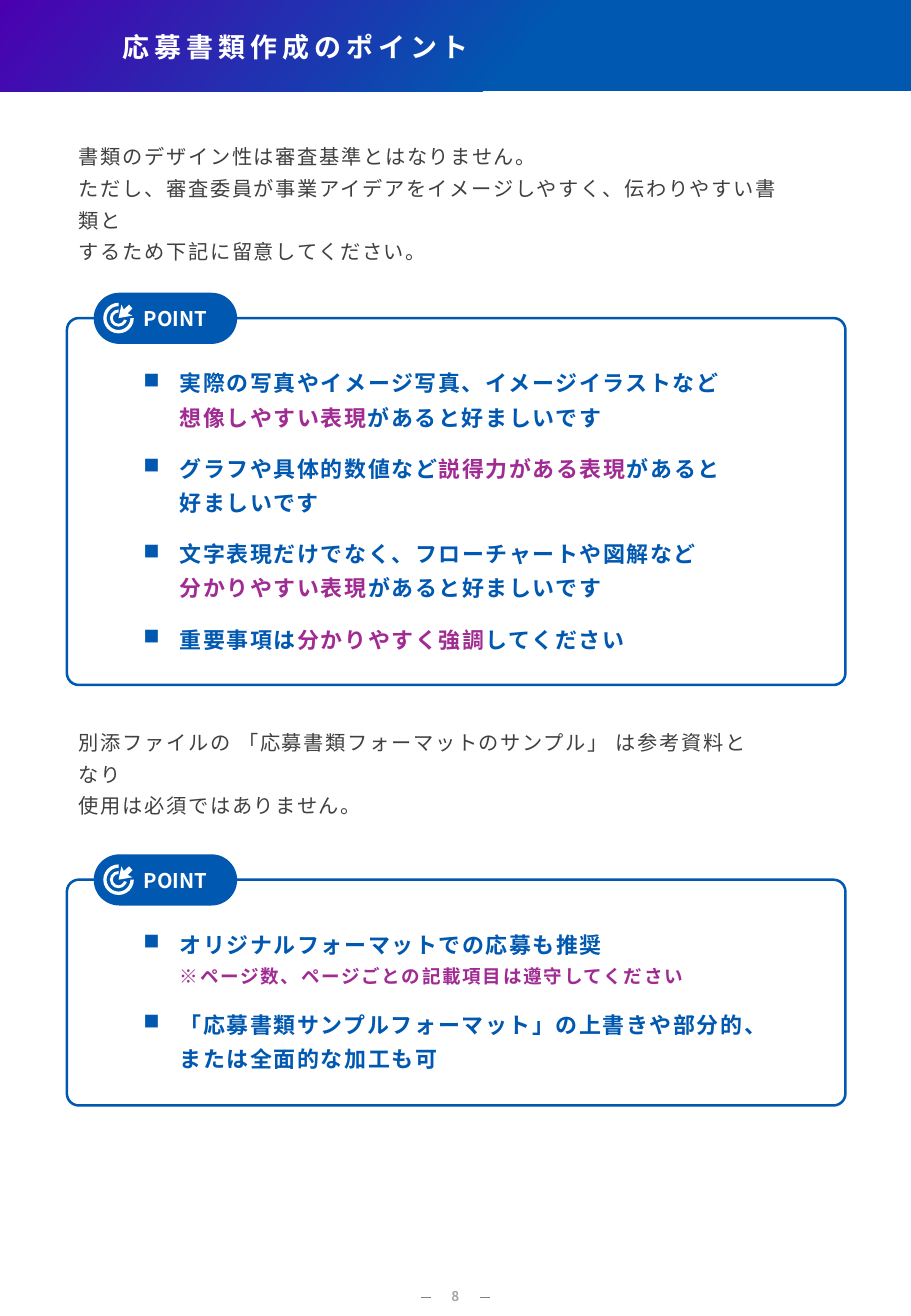
import pptx
import pptx.util
import pptx.dml.color
import pptx.enum.shapes
import pptx.enum.text
import pptx.oxml
import pptx.oxml.ns
from lxml import etree

Cm, Pt = pptx.util.Cm, pptx.util.Pt
RGB = pptx.dml.color.RGBColor.from_string
Kind = pptx.enum.shapes.MSO_SHAPE
Anchor = pptx.enum.text.MSO_ANCHOR
Align = pptx.enum.text.PP_ALIGN
qn = pptx.oxml.ns.qn


class Theme:
    font = "Noto Sans CJK JP"
    blue, violet, pink = "0058B0", "4B00B0", "A02B93"
    white, dark, grey = "FFFFFF", "404040", "808080"
    title, point, body, label, small, page = 16, 13, 12, 12, 11, 8


def write(para, text, size, color, bold=True, gap=0):
    """Add text run by run, with a line break at each newline."""
    for row, part in enumerate(text.split("\n")):
        if row:
            para.add_line_break()
        if not part:
            continue
        run = para.add_run()
        run.text = part
        run.font.size, run.font.bold = Pt(size), bold
        run.font.name = Theme.font
        run.font.color.rgb = RGB(color)
        props = run.font._element
        etree.SubElement(props, qn("a:ea")).set("typeface", Theme.font)
        props.set("spc", str(gap * 100))


def paint(kind, x, y, w, h, fill=None):
    """Add a preset shape with a plain fill and no line."""
    shape = slide.shapes.add_shape(kind, Cm(x), Cm(y), Cm(w), Cm(h))
    shape.shadow.inherit = False
    shape.line.fill.background()
    if fill:
        shape.fill.solid()
        shape.fill.fore_color.rgb = RGB(fill)
    else:
        shape.fill.background()
    return shape


deck = pptx.Presentation()
deck.slide_width, deck.slide_height = Cm(19.05), Cm(27.51)
slide = deck.slides.add_slide(deck.slide_layouts[5])

# Header band, behind the title
band = paint(Kind.RECTANGLE, 0, 0, 19.05, 1.91)
band.fill.gradient()
band.fill.gradient_angle = 140
for stop, (pos, color) in zip(band.fill.gradient_stops,
                              [(0.42, Theme.blue), (1, Theme.violet)]):
    stop.position, stop.color.rgb = pos, RGB(color)
slide.shapes.element.insert(2, band.element)

# Title
title = slide.shapes.title
title.left, title.top, title.width, title.height = Cm(2.31), Cm(0.43), Cm(16.03), Cm(0.97)
title.text_frame.vertical_anchor = Anchor.MIDDLE
para = title.text_frame.paragraphs[0]
para.alignment, para.line_spacing = Align.LEFT, 1.2
write(para, "応募書類作成のポイント", Theme.title, Theme.white, gap=3)

# Plain paragraphs above each card: top, width, height, lines
notes = [
    (2.74, 15.54, 2.9, ["書類のデザイン性は審査基準とはなりません。",
                        "ただし、審査委員が事業アイデアをイメージしやすく、伝わりやすい書類と\n"
                        "するため下記に留意してください。"]),
    (14.96, 14.58, 2.26, ["別添ファイルの 「応募書類フォーマットのサンプル」 は参考資料となり\n"
                          "使用は必須ではありません。"]),
]
for top, wide, high, lines in notes:
    frame = slide.shapes.add_textbox(Cm(1.4), Cm(top), Cm(wide), Cm(high)).text_frame
    frame.word_wrap, frame.vertical_anchor = True, Anchor.BOTTOM
    for row, line in enumerate(lines):
        para = frame.add_paragraph() if row else frame.paragraphs[0]
        para.line_spacing = 1.3
        write(para, line, Theme.body, Theme.dark, bold=False, gap=1)

# Cards: top, height, points made of (text, colour, size)
main = (Theme.blue, Theme.point)
key = (Theme.pink, Theme.point)
hint = (Theme.pink, Theme.small)
cards = [
    (6.65, 7.67, [
        [("実際の写真やイメージ写真、イメージイラストなど\n", main),
         ("想像しやすい表現", key), ("があると好ましいです", main)],
        [("グラフや具体的数値など", main), ("説得力がある表現", key),
         ("があると\n好ましいです", main)],
        [("文字表現だけでなく、フローチャートや図解など\n", main),
         ("分かりやすい表現", key), ("があると好ましいです", main)],
        [("重要事項は", main), ("分かりやすく強調", key), ("してください", main)],
    ]),
    (18.39, 4.72, [
        [("オリジナルフォーマットでの応募も推奨\n", main),
         ("※ページ数、ページごとの記載項目は遵守してください", hint)],
        [("「応募書類サンプルフォーマット」の上書きや部分的、\nまたは全面的な加工も可", main)],
    ]),
]
arrow = [(0.06, -0.28), (0, 0), (0.29, -0.05), (0.19, -0.1),
         (0.29, -0.2), (0.22, -0.28), (0.11, -0.18)]
hub = 2.48
for top, high, points in cards:
    # Frame
    card = paint(Kind.ROUNDED_RECTANGLE, 1.4, top, 16.28, high)
    card.adjustments[0] = 0.25 / high
    card.line.color.rgb, card.line.width = RGB(Theme.blue), Pt(1.5)

    # Bullet list
    frame = slide.shapes.add_textbox(Cm(2.29), Cm(top - 0.98), Cm(14.5), Cm(high + 0.98)).text_frame
    frame.word_wrap = True
    frame.margin_left, frame.margin_top = Cm(0.71), Cm(1.9)
    frame.margin_right, frame.margin_bottom = Cm(0.3), Cm(0.41)
    for row, point in enumerate(points):
        para = frame.add_paragraph() if row else frame.paragraphs[0]
        props = para._p.get_or_add_pPr()
        props.set("marL", str(Cm(0.76)))
        props.set("indent", str(-Cm(0.76)))
        tint = etree.SubElement(props, qn("a:buClr"))
        etree.SubElement(tint, qn("a:srgbClr")).set("val", Theme.blue)
        etree.SubElement(props, qn("a:buChar")).set("char", "■")
        para.line_spacing, para.space_after = 1.3, Pt(10)
        for text, (color, size) in point:
            write(para, text, size, color, gap=1)

    # Badge
    badge = paint(Kind.ROUNDED_RECTANGLE, 1.96, top - 0.53, 3, 1.07, Theme.blue)
    badge.adjustments[0] = 0.5
    frame = badge.text_frame
    frame.word_wrap, frame.vertical_anchor = False, Anchor.MIDDLE
    frame.margin_left = Cm(0.89)
    frame.paragraphs[0].alignment = Align.LEFT
    write(frame.paragraphs[0], "POINT", Theme.label, Theme.white)

    # Target icon: two open rings and an arrow
    for size, start, thick in [(0.64, 0, 0.11), (0.36, 15, 0.17)]:
        ring = paint(Kind.BLOCK_ARC, hub - size / 2, top - size / 2, size, size, Theme.white)
        ring.adjustments[0] = start * 0.6
        ring.adjustments[1] = 270 * 0.6
        ring.adjustments[2] = thick
    spots = [(Cm(hub + x), Cm(top + y)) for x, y in arrow]
    path = slide.shapes.build_freeform(*spots[0])
    path.add_line_segments(spots[1:], close=True)
    dart = path.convert_to_shape()
    dart.shadow.inherit = False
    dart.fill.solid()
    dart.fill.fore_color.rgb = RGB(Theme.white)
    dart.line.fill.background()

# Page number between two dashes
frame = slide.shapes.add_textbox(Cm(8.99), Cm(26.82), Cm(1.07), Cm(0.53)).text_frame
frame.word_wrap = False
frame.margin_top = frame.margin_bottom = Cm(0.1)
para = frame.paragraphs[0]
para.alignment = Align.CENTER
write(para, "8", Theme.page, Theme.grey)
shade = para._p.find(".//" + qn("a:srgbClr"))
etree.SubElement(shade, qn("a:alpha")).set("val", "70000")
for x in (8.81, 10.03):
    dash = slide.shapes.add_connector(pptx.enum.shapes.MSO_CONNECTOR.STRAIGHT,
                                      Cm(x), Cm(27.13), Cm(x + 0.21), Cm(27.13))
    dash.line.color.rgb, dash.line.width = RGB(Theme.grey), Pt(0.5)
    etree.SubElement(dash.element.spPr, qn("a:effectLst"))

deck.save("out.pptx")
